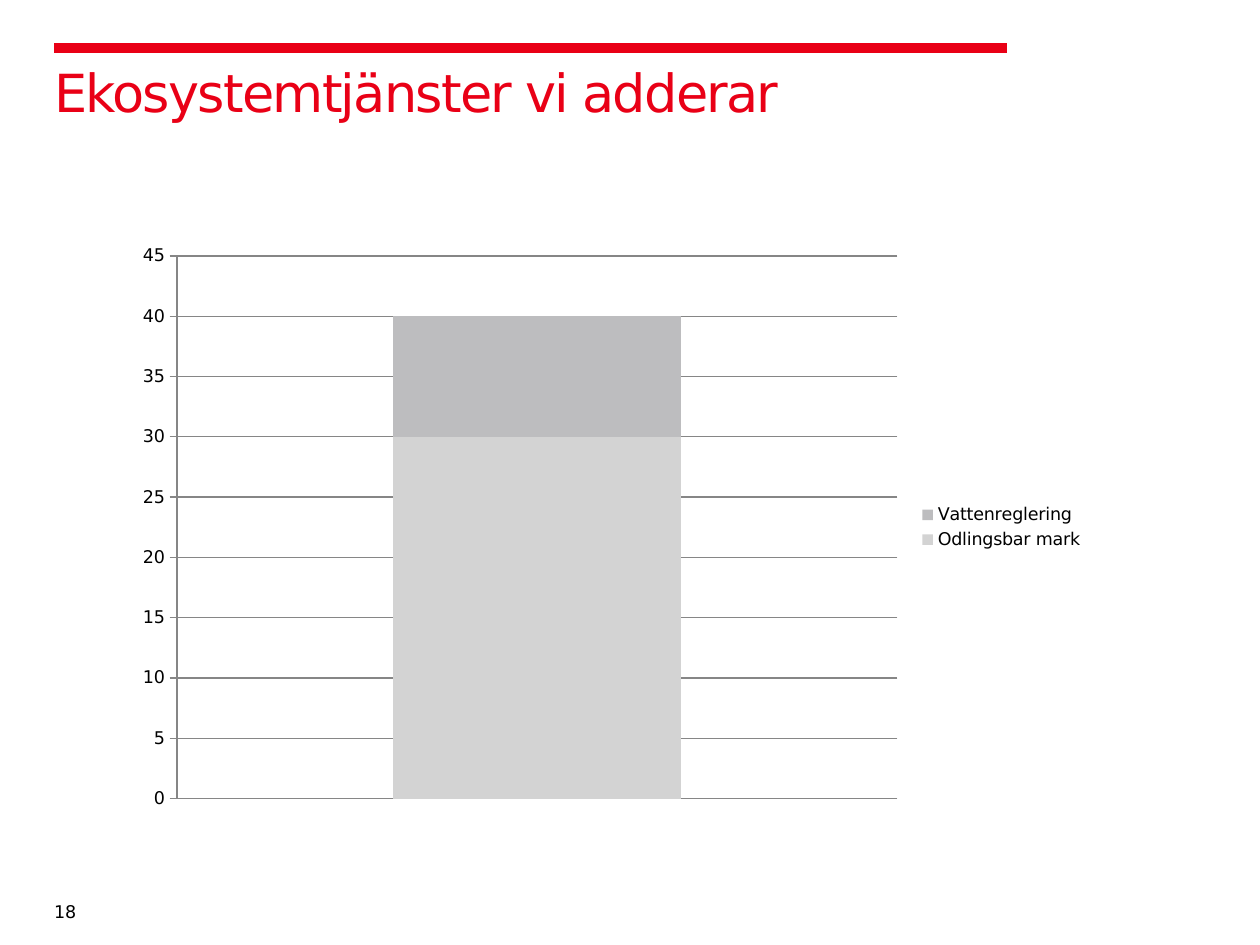
from lxml.etree import SubElement
from pptx import Presentation
from pptx.chart.data import CategoryChartData
from pptx.dml.color import RGBColor
from pptx.enum.chart import XL_CHART_TYPE as ChartType
from pptx.enum.chart import XL_LEGEND_POSITION as LegendPosition
from pptx.enum.chart import XL_TICK_MARK as TickMark
from pptx.enum.shapes import MSO_CONNECTOR as Connector
from pptx.enum.text import MSO_ANCHOR as Anchor
from pptx.oxml.ns import qn
from pptx.util import Inches, Pt

FONT = "DejaVu Sans"
COLORS = {
    "accent": "E90016",
    "text": "000000",
    "grid": "868686",
    "Odlingsbar mark": "D3D3D3",
    "Vattenreglering": "BDBDBF",
}
SERVICES = {"Odlingsbar mark": 30, "Vattenreglering": 10}


def color(name):
    return RGBColor.from_string(COLORS[name])


def add_text(slide, box, text, size, color_name, anchor, inset):
    """Add one line of text and return its run."""
    frame = slide.shapes.add_textbox(*map(Inches, box)).text_frame
    frame.word_wrap = True
    frame.vertical_anchor = anchor
    frame.margin_left = frame.margin_right = 0
    frame.margin_top = frame.margin_bottom = Inches(inset)
    run = frame.paragraphs[0].add_run()
    run.text = text
    run.font.name = FONT
    run.font.size = Pt(size)
    run.font.color.rgb = color(color_name)
    return run


prs = Presentation()
prs.slide_width, prs.slide_height = Inches(10), Inches(7.5)
slide = prs.slides.add_slide(prs.slide_layouts[6])

# Header rule and title share the left margin and the width
margin, header_width, rule_y = 0.43, 7.56, 0.38
rule = slide.shapes.add_connector(
    Connector.STRAIGHT, Inches(margin), Inches(rule_y),
    Inches(margin + header_width), Inches(rule_y))
rule.line.color.rgb = color("accent")
rule.line.width = Pt(6)
SubElement(rule._element.spPr, qn("a:effectLst"))

title = add_text(slide, (margin, 0.43, header_width, 1.18),
                 "Ekosystemtjänster vi adderar", 30, "accent", Anchor.TOP, 0.05)
title.font._element.set("spc", "-100")

add_text(slide, (margin, 7.1, 0.81, 0.27), "18", 10, "text", Anchor.MIDDLE, 0)

# Stacked column of the services
data = CategoryChartData()
data.categories = ["1"]
for service, value in SERVICES.items():
    data.add_series(service, [value])
chart = slide.shapes.add_chart(
    ChartType.COLUMN_STACKED, Inches(0.98), Inches(1.86),
    Inches(7.72), Inches(4.65), data).chart
chart.has_title = False
chart.font.name = FONT
chart.font.size = Pt(10)
chart.font.color.rgb = color("text")

plot = chart.plots[0]
plot.vary_by_categories = False
plot.overlap = 100
plot.gap_width = 150
for series in plot.series:
    series.format.fill.solid()
    series.format.fill.fore_color.rgb = color(series.name)

chart.category_axis.visible = False
scale = chart.value_axis
scale.has_major_gridlines = True
scale.major_tick_mark = TickMark.CROSS
scale.minor_tick_mark = TickMark.NONE
for line in (scale.format.line, scale.major_gridlines.format.line):
    line.color.rgb = color("grid")
    line.width = Pt(0.75)

chart.has_legend = True
chart.legend.position = LegendPosition.RIGHT
chart.legend.include_in_layout = False

prs.save("out.pptx")
